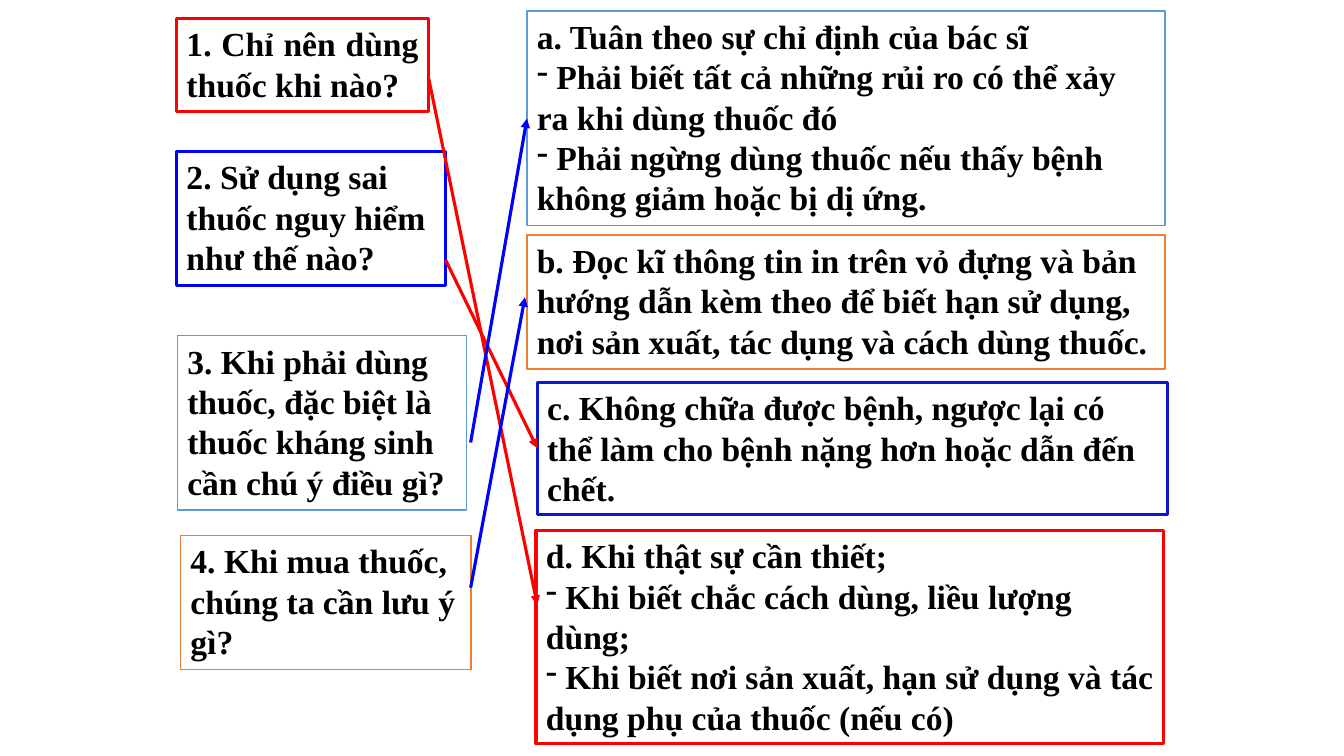
"""Build a matching exercise on using medicine safely."""
from lxml.etree import SubElement
from pptx import Presentation
from pptx.dml.color import RGBColor
from pptx.enum.shapes import MSO_CONNECTOR, MSO_SHAPE
from pptx.enum.text import MSO_ANCHOR, MSO_AUTO_SIZE, PP_ALIGN
from pptx.oxml.ns import qn
from pptx.util import Cm, Pt

BLACK = RGBColor(0x00, 0x00, 0x00)
WHITE = RGBColor(0xFF, 0xFF, 0xFF)
RED = RGBColor(0xFF, 0x00, 0x00)
BLUE = RGBColor(0x00, 0x00, 0xFF)
NAVY = RGBColor(0x0B, 0x19, 0xC8)
SKY = RGBColor(0x5B, 0x9B, 0xD5)
ORANGE = RGBColor(0xED, 0x7D, 0x31)

THIN, THICK = 1, 2.25
LEFT_SIDE = 1

QUESTIONS = [
    ((4.45, 0.46, 6.35, 2.36), RED, THICK, None, PP_ALIGN.JUSTIFY,
     ["1. Chỉ nên dùng thuốc khi nào?"]),
    ((4.45, 3.81, 6.78, 3.38), BLUE, THICK, None, PP_ALIGN.LEFT,
     ["2. Sử dụng sai thuốc nguy hiểm như thế nào?"]),
    ((4.47, 8.46, 7.29, 4.39), SKY, THIN, WHITE, PP_ALIGN.LEFT,
     ["3. Khi phải dùng thuốc, đặc biệt là thuốc kháng sinh cần chú ý điều gì?"]),
    ((4.55, 13.49, 7.32, 3.38), ORANGE, THIN, WHITE, PP_ALIGN.LEFT,
     ["4. Khi mua thuốc, chúng ta cần lưu ý gì?"]),
]

ANSWERS = [
    ((13.28, 0.28, 16.08, 5.41), SKY, THIN, WHITE, PP_ALIGN.LEFT,
     ["a. Tuân theo sự chỉ định của bác sĩ",
      " Phải biết tất cả những rủi ro có thể xảy ra khi dùng thuốc đó",
      " Phải ngừng dùng thuốc nếu thấy bệnh không giảm hoặc bị dị ứng."]),
    ((13.28, 5.92, 16.08, 3.38), ORANGE, THIN, WHITE, PP_ALIGN.LEFT,
     ["b. Đọc kĩ thông tin in trên vỏ đựng và bản hướng dẫn kèm theo để biết "
      "hạn sử dụng, nơi sản xuất, tác dụng và cách dùng thuốc."]),
    ((13.54, 9.63, 15.88, 3.33), NAVY, THICK, None, PP_ALIGN.LEFT,
     ["c. Không chữa được bệnh, ngược lại có thể làm cho bệnh nặng hơn "
      "hoặc dẫn đến chết."]),
    ((13.51, 13.36, 15.82, 5.38), RED, THICK, None, PP_ALIGN.LEFT,
     ["d. Khi thật sự cần thiết;",
      " Khi biết chắc cách dùng, liều lượng dùng;",
      " Khi biết nơi sản xuất, hạn sử dụng và tác dụng phụ của thuốc (nếu có)"]),
]


class MatchingSlide:
    """Hold the text style and the current slide."""

    font = {"name": "Times New Roman", "size": Pt(24), "bold": True}
    frame = {"word_wrap": True, "vertical_anchor": MSO_ANCHOR.TOP,
             "auto_size": MSO_AUTO_SIZE.SHAPE_TO_FIT_TEXT}

    def __init__(self, prs):
        """Add a blank slide."""
        self.slide = prs.slides.add_slide(prs.slide_layouts[6])

    def apply(self, target, values):
        """Set each format value on the target."""
        for name, value in values.items():
            setattr(target, name, value)

    def outline(self, line, color, width):
        """Colour a line and set its width."""
        line.color.rgb = color
        line.width = Pt(width)

    def bullet(self, p):
        """Put a dash in front of a paragraph."""
        pPr = p._p.get_or_add_pPr()
        self.apply_indent(pPr)
        SubElement(pPr, qn("a:buFontTx"))
        SubElement(pPr, qn("a:buChar"), char="-")

    def apply_indent(self, pPr):
        """Let wrapped lines start level with the dash."""
        for name in ("marL", "indent"):
            pPr.set(name, "0")

    def box(self, place, color, width, fill, align, lines):
        """Add an outlined box whose first line is a heading."""
        sp = self.slide.shapes.add_shape(MSO_SHAPE.RECTANGLE, *map(Cm, place))
        sp.shadow.inherit = False
        self.outline(sp.line, color, width)
        if fill is None:
            sp.fill.background()
        else:
            sp.fill.solid()
            sp.fill.fore_color.rgb = fill
        tf = sp.text_frame
        self.apply(tf, self.frame)
        for i, text in enumerate(lines):
            p = tf.paragraphs[0] if i == 0 else tf.add_paragraph()
            p.alignment = align
            if i:
                self.bullet(p)
            r = p.add_run()
            r.text = text
            self.apply(r.font, self.font)
            r.font.color.rgb = BLACK
        return sp

    def arrow(self, start, end, color, target=None):
        """Add an arrow, joined to the target's left side if one is given."""
        cxn = self.slide.shapes.add_connector(
            MSO_CONNECTOR.STRAIGHT, *map(Cm, start + end))
        if target is not None:
            cxn.end_connect(target, LEFT_SIDE)
        self.outline(cxn.line, color, THICK)
        SubElement(cxn.line._get_or_add_ln(), qn("a:tailEnd"), type="triangle")
        SubElement(cxn._element.spPr, qn("a:effectLst"))


def main():
    """Build and save the slide."""
    prs = Presentation()
    prs.slide_width, prs.slide_height = Cm(33.87), Cm(19.05)
    s = MatchingSlide(prs)
    for question in QUESTIONS:
        s.box(*question)
    a, b, c, d = [s.box(*answer) for answer in ANSWERS]
    s.arrow((10.8, 1.96), (13.54, 15.24), RED)
    s.arrow((11.23, 6.55), (13.54, 11.15), RED, c)
    s.arrow((11.86, 11.15), (13.31, 2.79), BLUE, a)
    s.arrow((11.86, 14.81), (13.23, 7.49), BLUE)
    prs.save("out.pptx")


if __name__ == "__main__":
    main()
